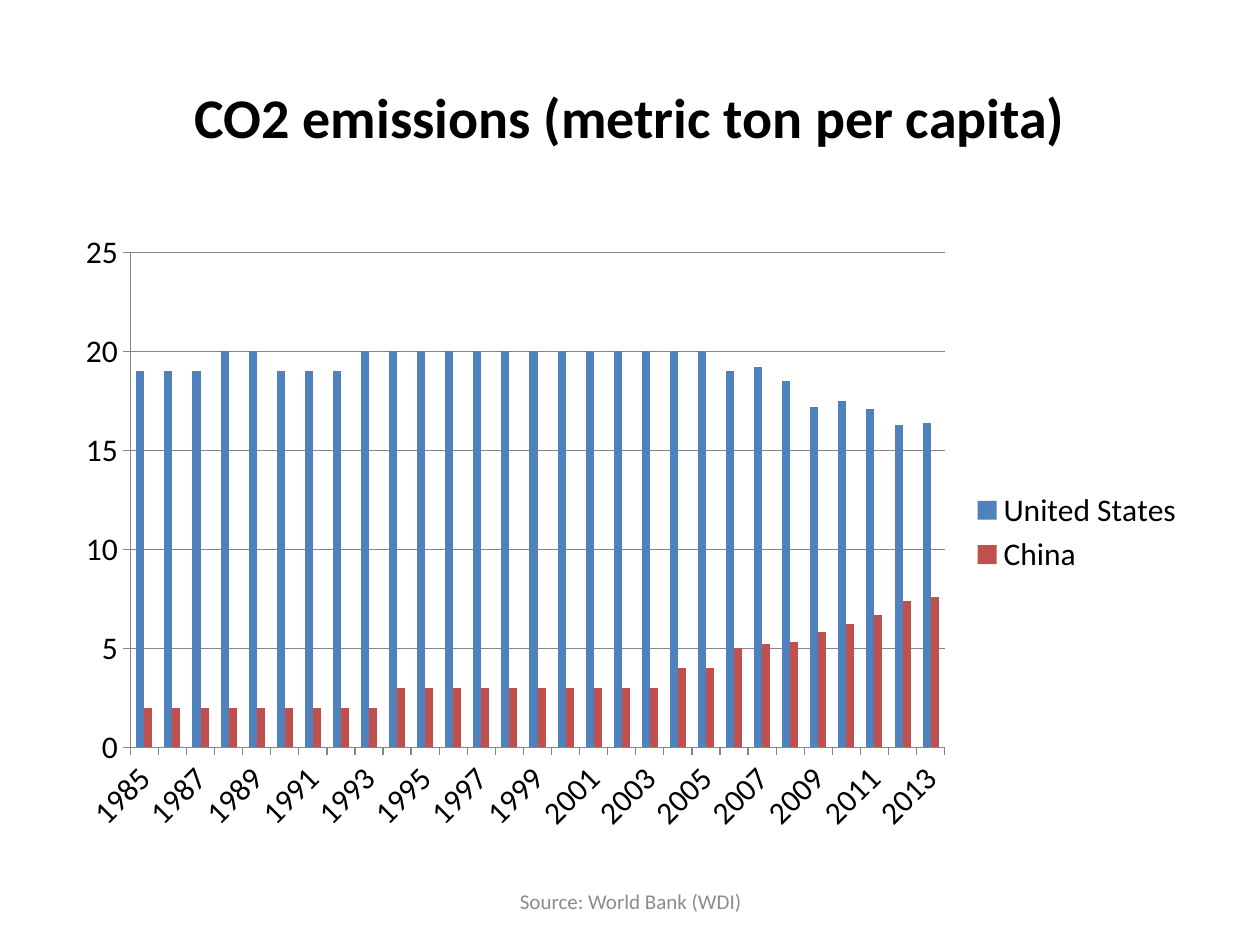
from pptx import Presentation
from pptx.chart.data import CategoryChartData
from pptx.dml.color import RGBColor
from pptx.enum.chart import XL_CHART_TYPE, XL_LEGEND_POSITION, XL_TICK_MARK
from pptx.enum.text import MSO_ANCHOR, PP_ALIGN
from pptx.util import Cm, Pt

COLUMNS = XL_CHART_TYPE.COLUMN_CLUSTERED
RIGHT = XL_LEGEND_POSITION.RIGHT
OUTSIDE, NO_TICK = XL_TICK_MARK.OUTSIDE, XL_TICK_MARK.NONE
MIDDLE = MSO_ANCHOR.MIDDLE
CENTER = PP_ALIGN.CENTER

BLACK = RGBColor(0x00, 0x00, 0x00)
GRAY = RGBColor(0x8C, 0x8C, 0x8C)
RULE = RGBColor(0x86, 0x86, 0x86)
BLUE = RGBColor(0x4F, 0x81, 0xBD)
RED = RGBColor(0xC0, 0x50, 0x4D)
FACE = "Calibri"

YEARS = range(1985, 2014)
SERIES = [
    ("United States", BLUE,
     [19] * 3 + [20] * 2 + [19] * 3 + [20] * 13
     + [19, 19.2, 18.5, 17.2, 17.5, 17.1, 16.3, 16.4]),
    ("China", RED,
     [2] * 9 + [3] * 10 + [4] * 2
     + [5, 5.2, 5.3, 5.8, 6.2, 6.7, 7.4, 7.6]),
]


def set_font(font, size, color, bold=False):
    font.name = FACE
    font.size = Pt(size)
    font.bold = bold
    font.color.rgb = color


def set_text(shape, text, size, color, bold=False):
    frame = shape.text_frame
    frame.word_wrap = True
    frame.vertical_anchor = MIDDLE
    para = frame.paragraphs[0]
    para.text = text
    para.alignment = CENTER
    set_font(para.font, size, color, bold)


def add_title(slide, text):
    title = slide.shapes.title
    title.left, title.top = Cm(1.27), Cm(0.76)
    title.width, title.height = Cm(22.86), Cm(3.18)
    set_text(title, text, 32, BLACK, bold=True)


def style_axis(axis):
    axis.major_tick_mark = OUTSIDE
    axis.minor_tick_mark = NO_TICK
    axis.format.line.color.rgb = RULE
    axis.format.line.width = Pt(0.75)


def add_chart(slide):
    data = CategoryChartData()
    data.categories = [str(year) for year in YEARS]
    for name, _, values in SERIES:
        data.add_series(name, values)
    frame = slide.shapes.add_chart(
        COLUMNS, Cm(1.27), Cm(4.45), Cm(22.86), Cm(12.57), data)
    chart = frame.chart
    chart.has_title = False
    set_font(chart.font, 18, BLACK)
    chart.has_legend = True
    chart.legend.position = RIGHT
    chart.legend.include_in_layout = False

    plot = chart.plots[0]
    plot.gap_width = 150
    plot.overlap = 0
    plot.vary_by_categories = False
    for series, (_, color, _) in zip(plot.series, SERIES):
        series.format.fill.solid()
        series.format.fill.fore_color.rgb = color

    style_axis(chart.category_axis)
    scale = chart.value_axis
    style_axis(scale)
    scale.minimum_scale, scale.maximum_scale = 0, 25
    scale.major_unit = 5
    scale.has_major_gridlines = True
    grid = scale.major_gridlines.format.line
    grid.color.rgb = RULE
    grid.width = Pt(0.75)


def add_source(slide, text):
    box = slide.shapes.add_textbox(Cm(8.69), Cm(17.65), Cm(8.05), Cm(1.02))
    set_text(box, text, 12, GRAY)


def main():
    deck = Presentation()
    deck.slide_width, deck.slide_height = Cm(25.4), Cm(19.05)
    slide = deck.slides.add_slide(deck.slide_layouts[5])
    add_title(slide, "CO2 emissions (metric ton per capita)")
    add_chart(slide)
    add_source(slide, "Source: World Bank (WDI)")
    deck.save("out.pptx")


if __name__ == "__main__":
    main()
